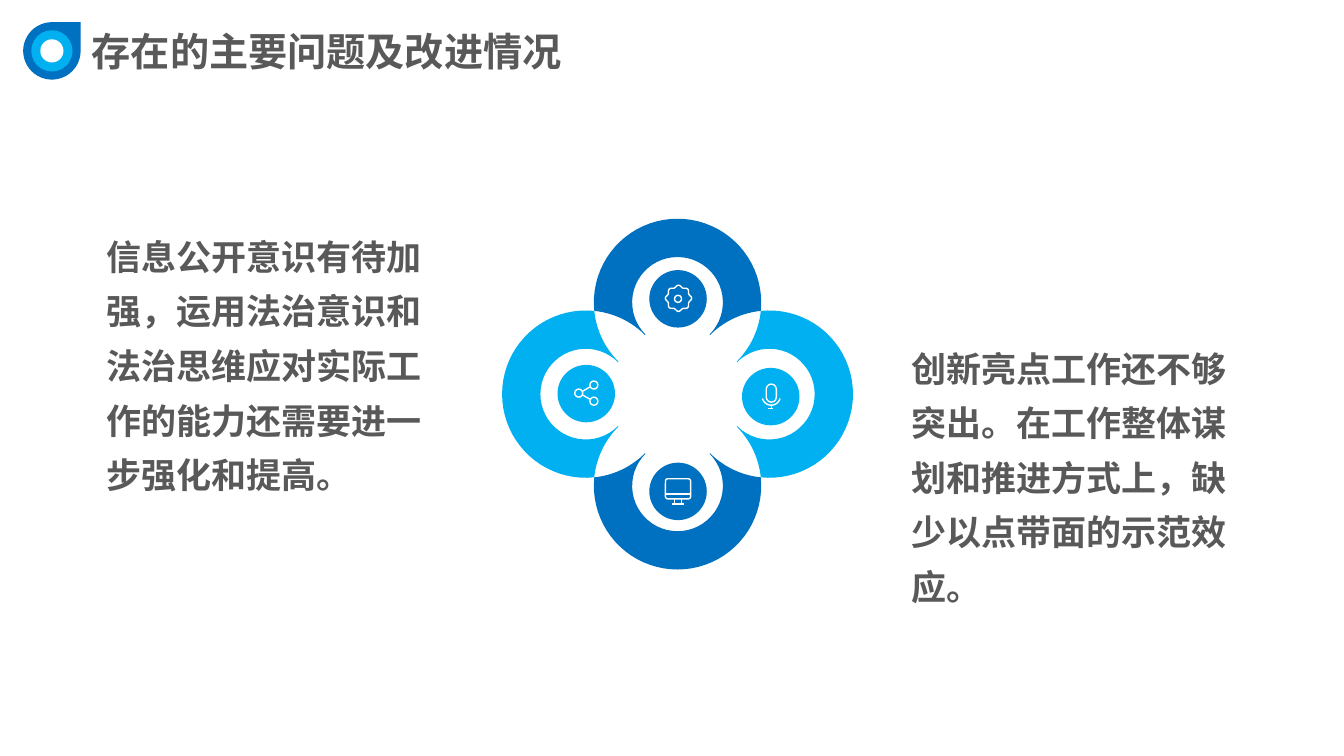
from dataclasses import dataclass
from math import cos, radians, sin

from lxml.etree import SubElement
from pptx import Presentation
from pptx.dml.color import RGBColor
from pptx.enum.shapes import MSO_CONNECTOR, MSO_SHAPE
from pptx.enum.text import MSO_ANCHOR, MSO_AUTO_SIZE, PP_ALIGN
from pptx.oxml.ns import qn
from pptx.util import Inches, Pt


@dataclass(frozen=True)
class Theme:
    font: str = "Arial"
    title_size: int = 28
    body_size: int = 25
    icon_line: float = 1
    text: RGBColor = RGBColor(0x59, 0x59, 0x59)
    dark: RGBColor = RGBColor(0x00, 0x70, 0xC0)
    light: RGBColor = RGBColor(0x00, 0xB0, 0xF0)
    white: RGBColor = RGBColor(0xFF, 0xFF, 0xFF)


theme = Theme()


def arc(x, y, radius, start, end, steps=40):
    """Points along a circle, angles in degrees, clockwise from the right."""
    angles = [radians(start + (end - start) * i / steps) for i in range(steps + 1)]
    return [(x + radius * cos(a), y + radius * sin(a)) for a in angles]


def paint(shape, fill):
    """Fill a shape without a line, or give it a white line when fill is None."""
    shape.shadow.inherit = False
    if fill is None:
        shape.fill.background()
        shape.line.color.rgb = theme.white
        shape.line.width = Pt(theme.icon_line)
    else:
        shape.fill.solid()
        shape.fill.fore_color.rgb = fill
        shape.line.fill.background()


deck = Presentation()
deck.slide_width, deck.slide_height = Inches(13.33), Inches(7.5)
page = deck.slides.add_slide(deck.slide_layouts.get_by_name("Two Content"))

# Title and the two problem statements
texts = [
    ("存在的主要问题及改进情况", (0.81, 0.22, 4.87, 0.6), theme.title_size, 1, False),
    ("信息公开意识有待加强，运用法治意识和法治思维应对实际工作的能力还需要进一步强化和提高。",
     (0.96, 2.16, 3.65, 2.81), theme.body_size, 1.3, True),
    ("创新亮点工作还不够突出。在工作整体谋划和推进方式上，缺少以点带面的示范效应。",
     (8.94, 3.27, 3.41, 2.81), theme.body_size, 1.3, True),
]
for box, (text, place, size, spacing, wrap) in zip(page.placeholders, texts):
    box.left, box.top, box.width, box.height = map(Inches, place)
    frame = box.text_frame
    frame.text = text
    frame.word_wrap = wrap
    frame.auto_size = MSO_AUTO_SIZE.SHAPE_TO_FIT_TEXT
    frame.vertical_anchor = MSO_ANCHOR.TOP
    para = frame.paragraphs[0]
    para.alignment = PP_ALIGN.LEFT
    para.line_spacing = spacing
    para.space_before = Pt(0)
    para.font.name = theme.font
    para.font.size = Pt(size)
    para.font.bold = True
    para.font.color.rgb = theme.text
    properties = para._p.get_or_add_pPr()
    properties.set("marL", "0")
    properties.set("indent", "0")
    bullet = SubElement(properties, qn("a:buNone"))
    properties.find(qn("a:defRPr")).addprevious(bullet)

# Drop marker beside the title
marker = page.shapes.add_group_shape().shapes
for kind, edge, size, color in [
    (MSO_SHAPE.TEAR, 0.23, 0.57, theme.dark),
    (MSO_SHAPE.OVAL, 0.31, 0.41, theme.light),
    (MSO_SHAPE.OVAL, 0.4, 0.23, theme.white),
]:
    paint(marker.add_shape(kind, Inches(edge), Inches(edge - 0.01),
                           Inches(size), Inches(size)), color)

# Four petals: one outline, bounded by its neighbours, turned by quarters
center_x, center_y = 6.72, 3.91
reach, outer, inner, tip = 0.91, 0.83, 0.45, 6
top_petal = (
    arc(0, -reach, outer, 180 - tip, 360 + tip)
    + arc(reach, 0, outer, 270 - tip, 225)
    + arc(0, -reach, inner, 405, 135)
    + arc(-reach, 0, outer, -45, tip - 90)
)
outlines = []
for turn, color in [(90, theme.light), (270, theme.light), (180, theme.dark), (0, theme.dark)]:
    c, s = cos(radians(turn)), sin(radians(turn))
    petal = [(center_x + x * c - y * s, center_y + x * s + y * c) for x, y in top_petal]
    outlines.append((petal, True, color))

# Gear rim and microphone cradle
gear = []
for degree in range(0, 360, 3):
    radius = 0.12 + 0.01 * cos(radians(8 * degree))
    gear += arc(6.73, 2.96, radius, degree, degree, 1)[:1]
outlines.append((gear, True, None))
outlines.append((arc(7.65, 3.93, 0.09, 165, 15), False, None))

# Icon discs and the round or boxed parts of the icons
disc = 0.57
parts = [
    (MSO_SHAPE.OVAL, (6.44, 2.68, disc, disc), theme.dark),
    (MSO_SHAPE.OVAL, (5.53, 3.62, disc, disc), theme.light),
    (MSO_SHAPE.OVAL, (7.36, 3.65, disc, disc), theme.light),
    (MSO_SHAPE.OVAL, (6.44, 4.59, disc, disc), theme.dark),
    (MSO_SHAPE.OVAL, (6.69, 2.93, 0.07, 0.07), None),
    (MSO_SHAPE.ROUNDED_RECTANGLE, (7.6, 3.81, 0.1, 0.18), None),
    (MSO_SHAPE.ROUNDED_RECTANGLE, (6.6, 4.75, 0.25, 0.2), None),
]
parts += [(MSO_SHAPE.OVAL, (x - 0.04, y - 0.04, 0.08, 0.08), None)
          for x, y in [(5.74, 3.9), (5.89, 3.82), (5.89, 3.98)]]

flower = page.shapes.add_group_shape().shapes
for kind, place, color in parts:
    shape = flower.add_shape(kind, *map(Inches, place))
    paint(shape, color)
    if kind == MSO_SHAPE.ROUNDED_RECTANGLE:
        shape.adjustments[0] = 0.5 if place[2] < place[3] else 0.12

for points, closed, color in outlines:
    points = [(Inches(x), Inches(y)) for x, y in points]
    builder = flower.build_freeform(*points[0])
    builder.add_line_segments(points[1:], close=closed)
    paint(builder.convert_to_shape(), color)

# Straight strokes of the icons
strokes = [
    (5.78, 3.88, 5.85, 3.84), (5.78, 3.92, 5.85, 3.96),  # share links
    (7.65, 4.02, 7.65, 4.05), (7.62, 4.05, 7.67, 4.05),  # microphone stand
    (6.6, 4.9, 6.85, 4.9), (6.69, 4.95, 6.69, 5),  # screen edge and monitor stand
    (6.76, 4.95, 6.76, 5), (6.67, 5, 6.78, 5),
]
for ends in strokes:
    stroke = flower.add_connector(MSO_CONNECTOR.STRAIGHT, *map(Inches, ends))
    stroke.line.color.rgb = theme.white
    stroke.line.width = Pt(theme.icon_line)
    SubElement(stroke._element.spPr, qn("a:effectLst"))

# The layout's date, footer and number are not carried to the slide
deck.save("out.pptx")
